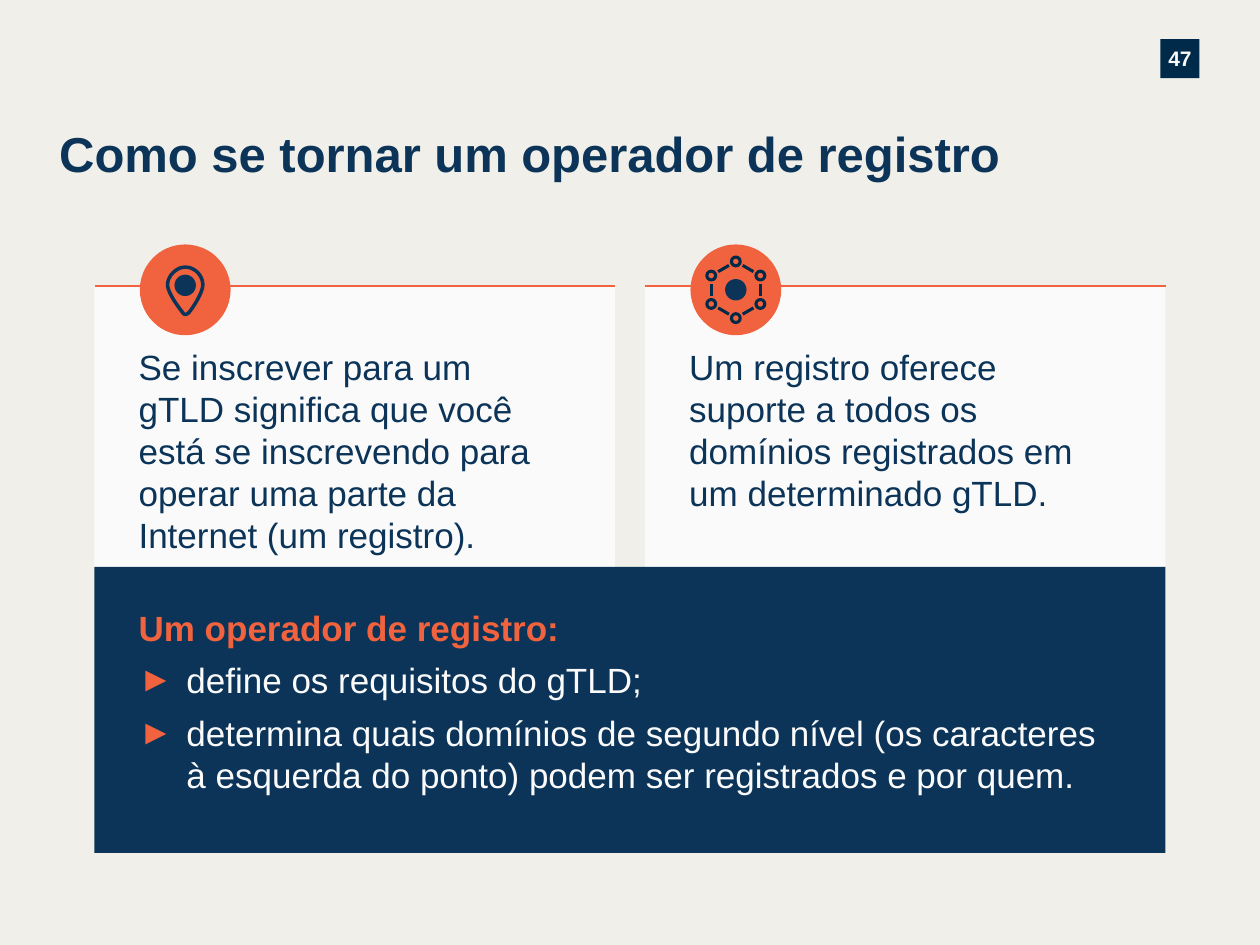
from math import cos, pi, sin

from lxml import etree
from pptx import Presentation
from pptx.dml.color import RGBColor
from pptx.enum.shapes import MSO_CONNECTOR, MSO_SHAPE
from pptx.enum.text import MSO_ANCHOR, MSO_AUTO_SIZE, PP_ALIGN
from pptx.oxml.ns import qn
from pptx.util import Inches, Pt

NAVY = RGBColor(0x0B, 0x34, 0x58)
DARK = RGBColor(0x00, 0x2A, 0x49)
ORANGE = RGBColor(0xF1, 0x63, 0x3E)
WHITE = RGBColor(0xFA, 0xFA, 0xFA)
CREAM = RGBColor(0xF1, 0xEF, 0xEA)

prs = Presentation()
prs.slide_width, prs.slide_height = Inches(10), Inches(7.5)
s = prs.slides.add_slide(prs.slide_layouts[5])
s.background.fill.solid()
s.background.fill.fore_color.rgb = CREAM


def add_shape(kind, x, y, w, h, fill=None, line=None, weight=1.75):
    sp = s.shapes.add_shape(kind, Inches(x), Inches(y), Inches(w), Inches(h))
    sp.shadow.inherit = False
    if fill is None:
        sp.fill.background()
    else:
        sp.fill.solid()
        sp.fill.fore_color.rgb = fill
    if line is None:
        sp.line.fill.background()
    else:
        sp.line.color.rgb = line
        sp.line.width = Pt(weight)
    return sp


def add_line(x1, y1, x2, y2, color, weight):
    ln = s.shapes.add_connector(MSO_CONNECTOR.STRAIGHT, Inches(x1), Inches(y1),
                                Inches(x2), Inches(y2))
    ln.line.color.rgb = color
    ln.line.width = Pt(weight)
    etree.SubElement(ln._element.spPr, qn("a:effectLst"))


# Title and page number
title = s.shapes.title
title.left, title.top = Inches(0.47), Inches(0.98)
title.width, title.height = Inches(7.76), Inches(0.52)
number = add_shape(MSO_SHAPE.RECTANGLE, 9.21, 0.31, 0.31, 0.31, DARK)
for sp, text, size, color, align, anchor in [
    (title, "Como se tornar um operador de registro", 28, NAVY,
     PP_ALIGN.LEFT, MSO_ANCHOR.TOP),
    (number, "47", 12, WHITE, PP_ALIGN.CENTER, MSO_ANCHOR.MIDDLE),
]:
    tf = sp.text_frame
    tf.auto_size = MSO_AUTO_SIZE.NONE
    tf.margin_left = tf.margin_top = tf.margin_right = tf.margin_bottom = 0
    tf.vertical_anchor = anchor
    p = tf.paragraphs[0]
    p.alignment = align
    r = p.add_run()
    r.text = text
    r.font.name, r.font.size, r.font.bold = "Arial", Pt(size), True
    r.font.color.rgb = color

# Two cards above one panel; paragraphs are (text, colour, bold, bullet)
CARD_TOP, CARD_W = 2.27, 4.13
card_lefts = [0.75, 5.12]
boxes = [
    (card_lefts[0], CARD_TOP, CARD_W, 2.23, WHITE, 0.47, 0.39, [
        ("Se inscrever para um gTLD significa que você está se inscrevendo "
         "para operar uma parte da Internet (um registro).", NAVY, False, False)]),
    (card_lefts[1], CARD_TOP, CARD_W, 2.23, WHITE, 0.47, 0.39, [
        ("Um registro oferece suporte a todos os domínios registrados em "
         "um determinado gTLD.", NAVY, False, False)]),
    (0.75, 4.5, 8.5, 2.27, NAVY, 0.31, 0.47, [
        ("Um operador de registro:", ORANGE, True, False),
        ("define os requisitos do gTLD;", WHITE, False, True),
        ("determina quais domínios de segundo nível (os caracteres à esquerda "
         "do ponto) podem ser registrados e por quem.", WHITE, False, True)]),
]
for x, y, w, h, fill, inset_top, inset_right, paragraphs in boxes:
    tf = add_shape(MSO_SHAPE.RECTANGLE, x, y, w, h, fill).text_frame
    tf.word_wrap = True
    tf.vertical_anchor = MSO_ANCHOR.TOP
    tf.margin_left, tf.margin_right = Inches(0.35), Inches(inset_right)
    tf.margin_top, tf.margin_bottom = Inches(inset_top), Inches(0.3)
    for i, (text, color, bold, bullet) in enumerate(paragraphs):
        p = tf.add_paragraph() if i else tf.paragraphs[0]
        p.alignment = PP_ALIGN.LEFT
        if bullet:
            p.space_before = Pt(6)
            pPr = p._p.get_or_add_pPr()
            pPr.set("marL", str(Inches(0.38)))
            pPr.set("indent", str(-Inches(0.38)))
            bu_color = etree.SubElement(pPr, qn("a:buClr"))
            etree.SubElement(bu_color, qn("a:srgbClr"), val=str(ORANGE))
            etree.SubElement(pPr, qn("a:buFont"), typeface="Arial")
            etree.SubElement(pPr, qn("a:buChar"), char="►")
        r = p.add_run()
        r.text = text
        r.font.name, r.font.size, r.font.bold = "Arial", Pt(20), bold
        r.font.color.rgb = color

# Top rules and icon discs
for x in card_lefts:
    add_line(x, CARD_TOP, x + CARD_W, CARD_TOP, ORANGE, 1.25)
    add_shape(MSO_SHAPE.OVAL, x + 0.36, 1.94, 0.72, 0.72, ORANGE)

# Network icon: a hub inside a hexagon of nodes
cx, cy, radius = 5.84, 2.3, 0.225
nodes = [(cx + radius * sin(k * pi / 3), cy - radius * cos(k * pi / 3))
         for k in range(6)]
for (x1, y1), (x2, y2) in zip(nodes, nodes[1:] + nodes[:1]):
    dx, dy = (x2 - x1) * 0.28, (y2 - y1) * 0.28
    add_line(x1 + dx, y1 + dy, x2 - dx, y2 - dy, DARK, 1.75)
    add_shape(MSO_SHAPE.OVAL, x1 - 0.035, y1 - 0.035, 0.07, 0.07, line=DARK)
add_shape(MSO_SHAPE.OVAL, cx - 0.085, cy - 0.085, 0.17, 0.17, NAVY)

# Map pin icon: Bezier outline sampled into short segments
add_shape(MSO_SHAPE.OVAL, 1.385, 2.18, 0.17, 0.17, NAVY)
start = (1.5, 2.48)
curves = [
    ((1.48, 2.5), (1.46, 2.5), (1.45, 2.48)),
    ((1.41, 2.43), (1.33, 2.32), (1.33, 2.26)),
    ((1.33, 2.19), (1.4, 2.12), (1.47, 2.12)),
    ((1.55, 2.12), (1.61, 2.19), (1.61, 2.26)),
    ((1.61, 2.32), (1.54, 2.43), (1.5, 2.48)),
]
points = [start]
for c1, c2, end in curves:
    a = points[-1]
    for t in [k / 10 for k in range(1, 11)]:
        u = 1 - t
        points.append(tuple(
            u**3 * a[i] + 3 * u * u * t * c1[i] + 3 * u * t * t * c2[i] + t**3 * end[i]
            for i in range(2)))
outline = [(Inches(x), Inches(y)) for x, y in points]
builder = s.shapes.build_freeform(*outline[0])
builder.add_line_segments(outline[1:], close=True)
pin = builder.convert_to_shape()
pin.shadow.inherit = False
pin.fill.background()
pin.line.color.rgb = NAVY
pin.line.width = Pt(2)

prs.save("out.pptx")
